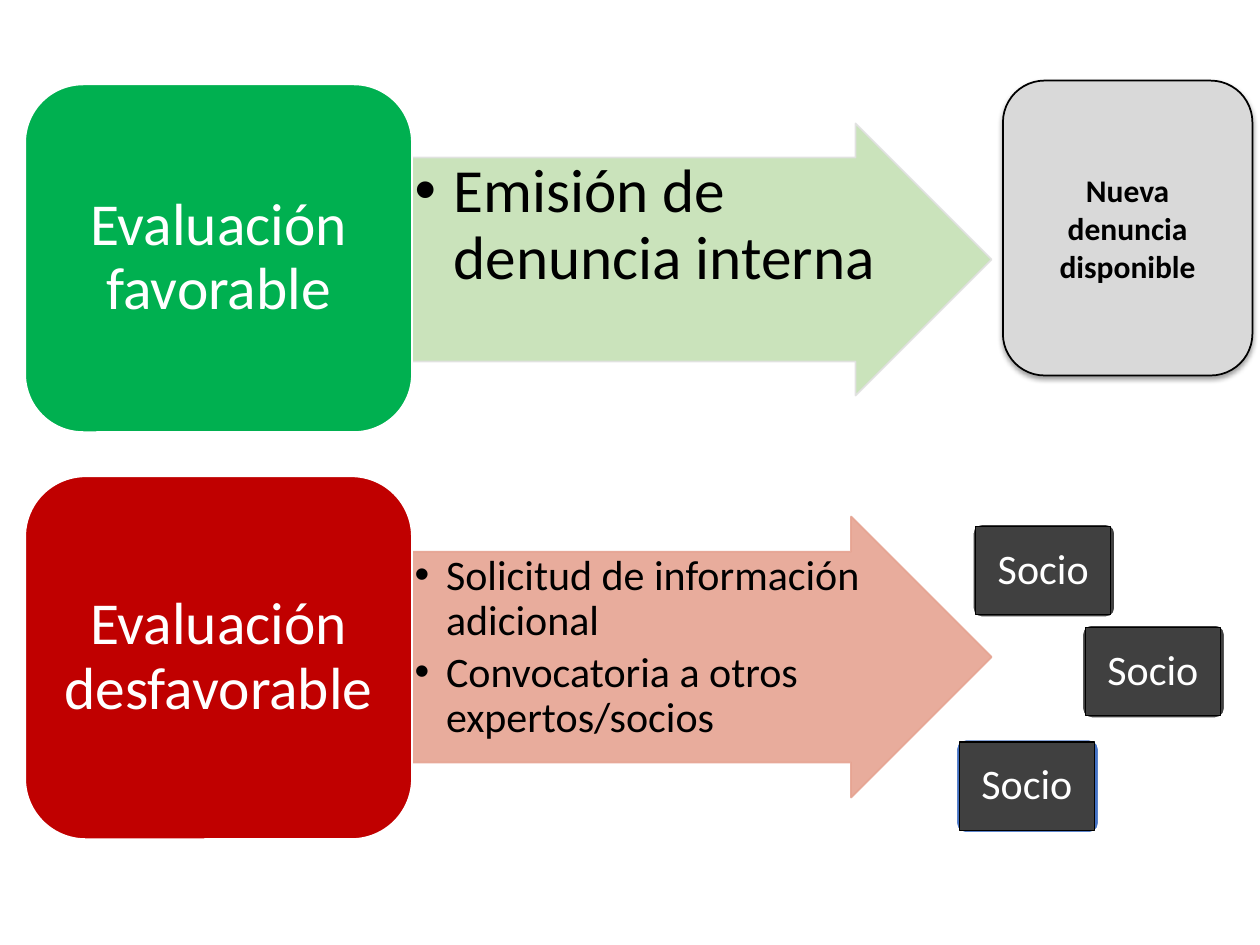
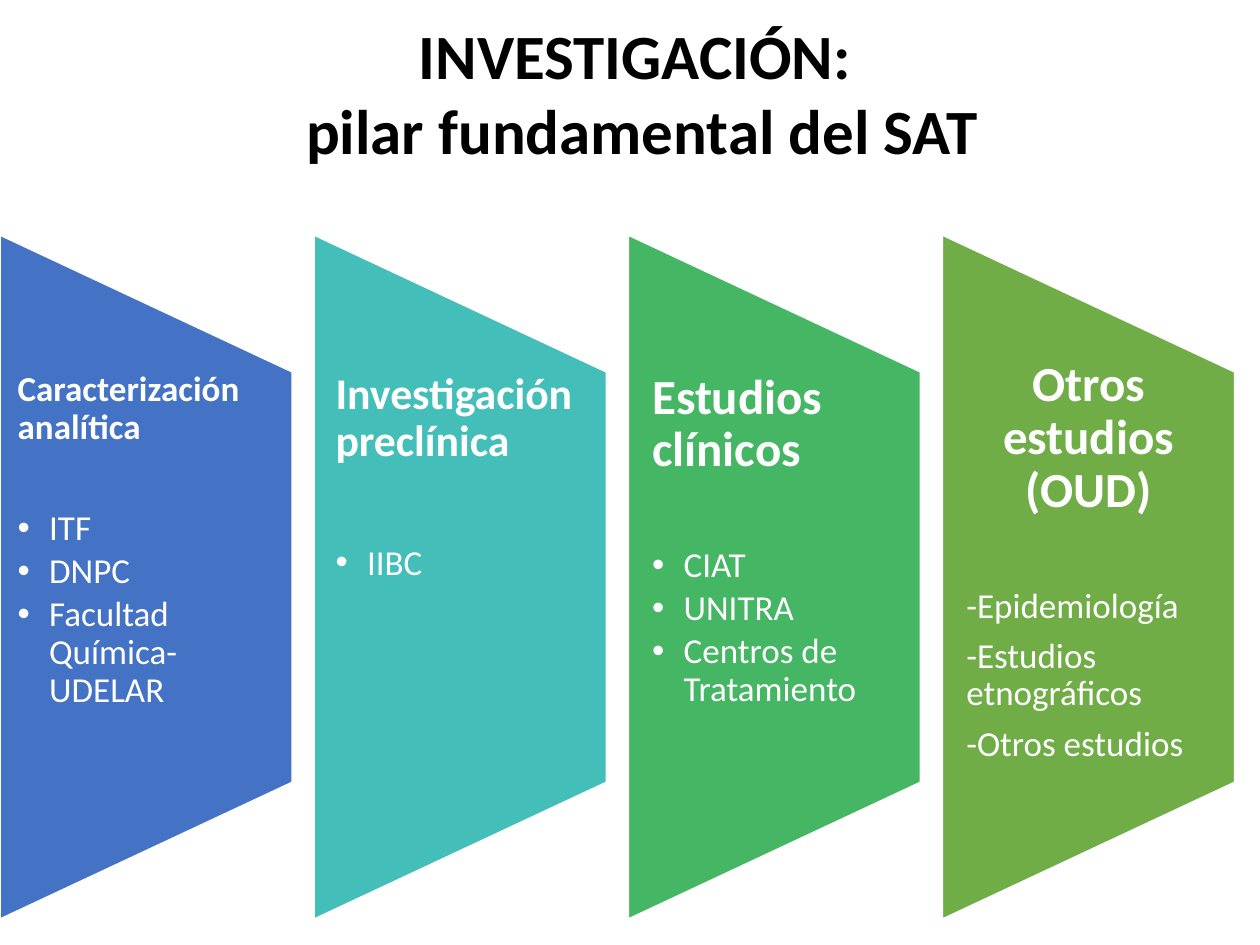
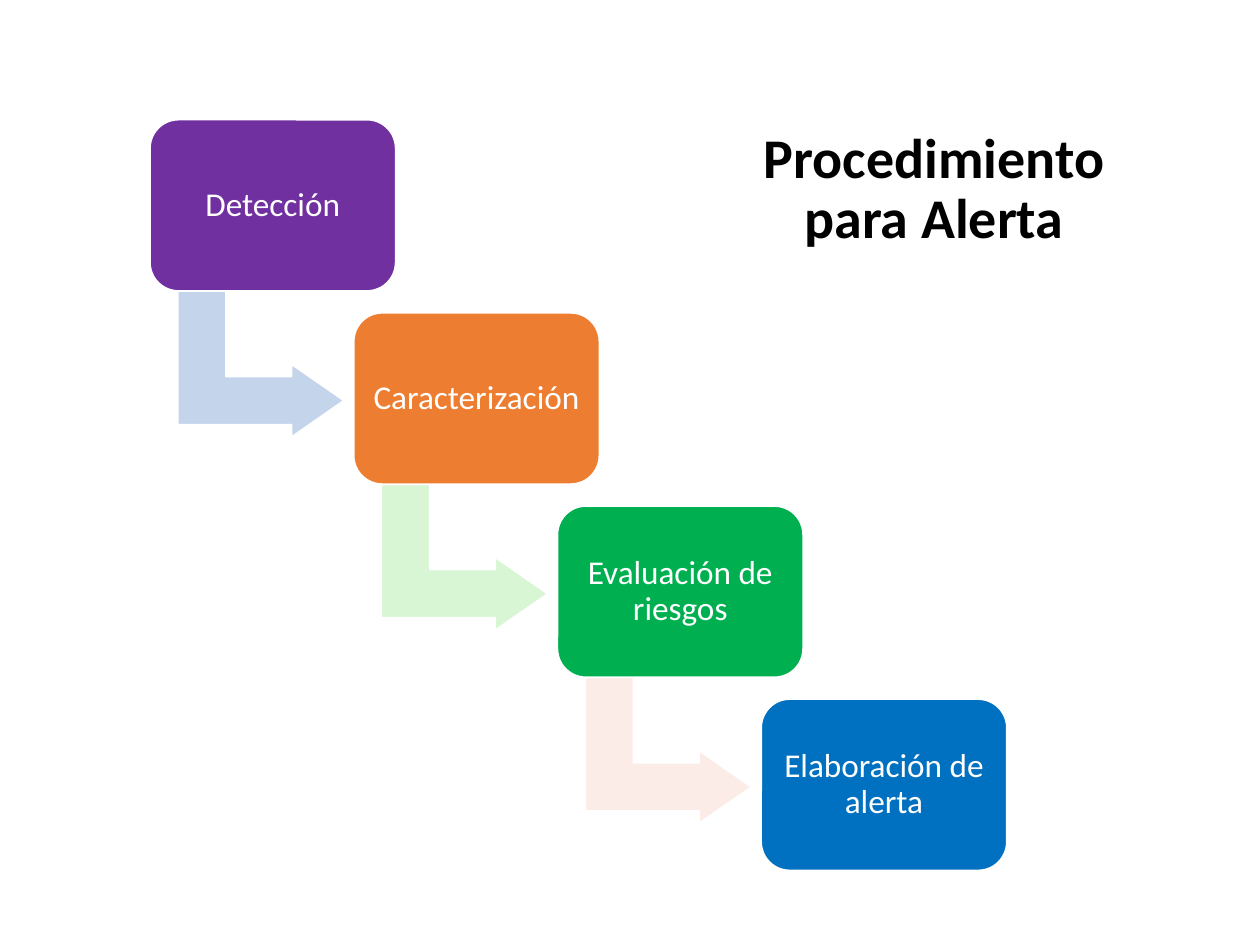
"""Builds three slides on an alert system: evaluation outcomes, research pillars and procedure."""
from dataclasses import dataclass

from lxml.etree import SubElement
from pptx import Presentation
from pptx.dml.color import RGBColor
from pptx.enum.shapes import MSO_SHAPE as Preset
from pptx.enum.text import MSO_ANCHOR as Anchor, PP_ALIGN as Align
from pptx.oxml.ns import qn
from pptx.util import Inches, Pt


@dataclass(frozen=True)
class Theme:
    font: str = "Calibri"
    black: str = "000000"
    white: str = "FFFFFF"
    green: str = "00B050"
    red: str = "C00000"
    pale_green: str = "C5E0B4"
    pale_red: str = "E6A492"
    pale_line: str = "E1E1E1"
    grey: str = "D9D9D9"
    dark: str = "404040"
    blue: str = "4472C4"
    teal: str = "43BEB9"
    emerald: str = "45B664"
    olive: str = "70AD47"
    purple: str = "7030A0"
    orange: str = "ED7D31"
    deep_blue: str = "0070C0"
    step_arrows: tuple = ("C4D5EB", "D8F5D4", "FCECE8")
    title: int = 36
    short_title: int = 32
    outcome: int = 34
    partner: int = 24
    step: int = 19
    item: int = 20
    note: int = 18
    tight: float = 0.9
    heading_gap: float = 0.35
    item_gap: float = 0.15


theme = Theme()
presentation = Presentation()
presentation.slide_width = Inches(10)
presentation.slide_height = Inches(7.5)
COLUMN = presentation.slide_width / 100
ROW = presentation.slide_height / 75
blank = presentation.slide_layouts[6]


def add_block(slide, preset, left, top, width, height, fill=None, line=theme.white,
              line_width=1, opacity=None, adjustments=(), rotation=0,
              insets=(1, 0.5, 1, 0.5), anchor=Anchor.MIDDLE):
    place = [int(left * COLUMN), int(top * ROW), int(width * COLUMN), int(height * ROW)]
    if preset is None:
        shape = slide.shapes.add_textbox(*place)
    else:
        shape = slide.shapes.add_shape(preset, *place)
        shape.shadow.inherit = False
        shape.rotation = rotation
        for index, value in enumerate(adjustments):
            shape.adjustments[index] = value
        shape.fill.solid()
        shape.fill.fore_color.rgb = RGBColor.from_string(fill)
        shape.line.color.rgb = RGBColor.from_string(line)
        shape.line.width = Pt(line_width)
        if opacity:
            for color in shape._element.spPr.iter(qn("a:srgbClr")):
                SubElement(color, qn("a:alpha"), val=str(opacity * 1000))
    frame = shape.text_frame
    frame.word_wrap = True
    frame.vertical_anchor = anchor
    frame.margin_left, frame.margin_right = [int(insets[i] * COLUMN) for i in (0, 2)]
    frame.margin_top, frame.margin_bottom = [int(insets[i] * ROW) for i in (1, 3)]
    return shape


def write(shape, text, size, color=theme.white, bold=False, align=Align.CENTER,
          spacing=theme.tight, after=0, indent=0):
    frame = shape.text_frame
    paragraph = frame.paragraphs[0]
    if paragraph.runs:
        paragraph = frame.add_paragraph()
    if indent:
        properties = paragraph._p.get_or_add_pPr()
        properties.set("marL", str(int(indent * COLUMN)))
        properties.set("indent", str(-int(indent * COLUMN)))
        SubElement(properties, qn("a:buFont"), typeface="Arial")
        SubElement(properties, qn("a:buChar"), char="•")
    paragraph.alignment = align
    paragraph.line_spacing = spacing
    paragraph.space_after = Pt(after)
    run = paragraph.add_run()
    run.text = text
    run.font.name = theme.font
    run.font.size = Pt(size)
    run.font.bold = bold
    run.font.color.rgb = RGBColor.from_string(color)


slide = presentation.slides.add_slide(blank)
report = add_block(slide, Preset.ROUNDED_RECTANGLE, 79.6, 6.4, 19.8, 23.4, theme.grey,
                   theme.black, adjustments=[0.167])
write(report, "Nueva denuncia disponible", theme.note, theme.black, bold=True, spacing=1)
shadow = SubElement(report._element.spPr.find(qn("a:effectLst")), qn("a:outerShdw"),
                    blurRad=str(Pt(3.1)), dist=str(Pt(1.6)), dir="5400000", rotWithShape="0")
shadow_color = SubElement(shadow, qn("a:srgbClr"), val=theme.black)
SubElement(shadow_color, qn("a:alpha"), val="38000")

outcomes = [
    ("Evaluación favorable", theme.green, 6.7, 27.6, theme.pale_green, theme.pale_line,
     9.8, 21.6, 35, 3.1, ["Emisión de denuncia interna"]),
    ("Evaluación desfavorable", theme.red, 37.8, 28.8, theme.pale_red, theme.pale_red,
     41, 22.3, 24, 2.5,
     ["Solicitud de información adicional", "Convocatoria a otros expertos/socios"]),
]
for (label, fill, top, height, arrow_fill, arrow_line, arrow_top, arrow_height,
     size, indent, actions) in outcomes:
    arrow = add_block(slide, Preset.RIGHT_ARROW, 32.7, arrow_top, 46, arrow_height, arrow_fill,
                      arrow_line, opacity=90, adjustments=[0.75, 0.5],
                      insets=[0.2] * 4, anchor=Anchor.TOP)
    for action in actions:
        write(arrow, action, size, theme.black, align=Align.LEFT,
              after=size * theme.item_gap, indent=indent)
    outcome = add_block(slide, Preset.ROUNDED_RECTANGLE, 2, top, 30.7, height, fill,
                        insets=(1.4, 0.7, 1.4, 0.7))
    write(outcome, label, theme.outcome)

for left, top, fill in [(77.2, 41.6, theme.dark), (85.9, 49.6, theme.dark),
                        (75.9, 58.7, theme.blue)]:
    add_block(slide, Preset.ROUNDED_RECTANGLE, left, top, 11.3, 7.4, fill, adjustments=[0.1])
    partner = add_block(slide, Preset.RECTANGLE, left + 0.25, top + 0.2, 10.7, 7, theme.dark,
                        theme.black, line_width=0.75, insets=[0.7] * 4)
    write(partner, "Socio", theme.partner)

slide = presentation.slides.add_slide(blank)
title = add_block(slide, None, 5.9, 0.8, 90.1, 31.3, anchor=Anchor.TOP)
for line in ("INVESTIGACIÓN: ", "pilar fundamental del SAT"):
    write(title, line, theme.title, theme.black, bold=True, spacing=1)

pillars = [
    ("Caracterización analítica", theme.blue, 20, 36, 1.4, 29.5, Align.LEFT, 2.5, theme.item_gap,
     ["ITF", "DNPC", "Facultad Química-UDELAR"]),
    ("Investigación preclínica", theme.teal, 25, 45, 1.7, 29.5, Align.LEFT, 2.5, theme.item_gap,
     ["IIBC"]),
    ("Estudios clínicos", theme.emerald, 28, 40, 1.9, 29.5, Align.LEFT, 2.5, theme.item_gap,
     ["CIAT", "UNITRA", "Centros de Tratamiento"]),
    ("Otros estudios (OUD)", theme.olive, 28, 40, 1.9, 28.5, Align.CENTER, 0, theme.heading_gap,
     ["-Epidemiología", "-Estudios etnográficos", "-Otros estudios"]),
]
pillar_width, pillar_height, pillar_pitch = 23.2, 54.3, 24.93
for index, (heading, fill, size, gap, inset, text_top, align, indent, item_gap,
            items) in enumerate(pillars):
    left = index * pillar_pitch
    add_block(slide, Preset.FLOWCHART_MANUAL_OPERATION,
              left - (pillar_height - pillar_width) / 2, 34.2, pillar_height, pillar_width,
              fill, rotation=270)
    content = add_block(slide, None, left, text_top, pillar_width, 32.6,
                        insets=(inset, 0, inset, 0), anchor=Anchor.TOP)
    write(content, heading, size, bold=True, align=align, after=gap)
    for item in items:
        write(content, item, theme.item, align=Align.LEFT if indent else Align.JUSTIFY,
              after=theme.item * item_gap, indent=indent)

slide = presentation.slides.add_slide(blank)
steps = [("Detección", theme.purple), ("Caracterización", theme.orange),
         ("Evaluación de riesgos", theme.green), ("Elaboración de alerta", theme.deep_blue)]
step_across, step_down = 16.17, 15.33
for index, (label, fill) in enumerate(steps):
    across, down = index * step_across, index * step_down
    if index < len(theme.step_arrows):
        add_block(slide, Preset.BENT_UP_ARROW, 14.9 + across, 22.3 + down, 11.6, 13.2,
                  theme.step_arrows[index], adjustments=[0.33, 0.25, 0.36], rotation=90)
    step = add_block(slide, Preset.ROUNDED_RECTANGLE, 11.9 + across, 9.5 + down, 19.5, 13.6,
                     fill, adjustments=[0.167], insets=[0.8] * 4)
    write(step, label, theme.step)
title = add_block(slide, None, 58, 2.9, 32.3, 17.5, anchor=Anchor.BOTTOM)
write(title, "Procedimiento para Alerta", theme.short_title, theme.black, bold=True)

presentation.save("out.pptx")
